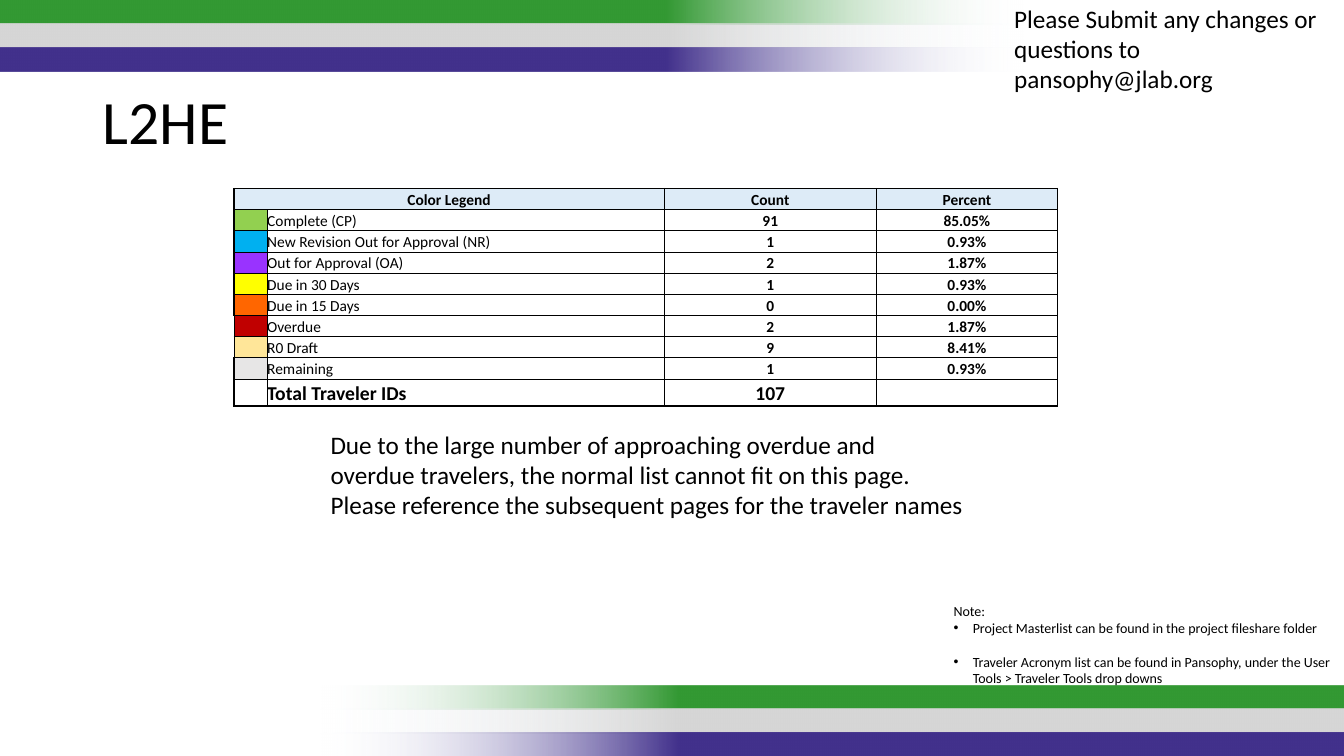
from copy import deepcopy

from lxml.etree import SubElement
from pptx import Presentation
from pptx.dml.color import RGBColor
from pptx.enum.shapes import MSO_SHAPE
from pptx.enum.text import MSO_ANCHOR, PP_ALIGN
from pptx.oxml.ns import qn
from pptx.util import Inches, Pt

COLORS = {
    "black": "000000", "fade": "F7FAFD", "header": "DDEBF7",
    "green": "339933", "gray": "D6D6D6", "purple": "42318C",
}

# Swatch, label, count, percent
STATUSES = [
    ("92D050", "Complete (CP)", "91", "85.05%"),
    ("00B0F0", "New Revision Out for Approval (NR)", "1", "0.93%"),
    ("9933FF", "Out for Approval (OA)", "2", "1.87%"),
    ("FFFF00", "Due in 30 Days", "1", "0.93%"),
    ("FF6600", "Due in 15 Days", "0", "0.00%"),
    ("C00000", "Overdue", "2", "1.87%"),
    ("FFE699", "R0 Draft", "9", "8.41%"),
    ("E7E6E6", "Remaining", "1", "0.93%"),
]
THIN_LEFT = ("Overdue", "R0 Draft")


def write(para, text, size=18, font="Calibri", color=COLORS["black"],
          bold=False, align=None, bullet=False, before=None, spacing=None):
    """Put formatted text in a paragraph."""
    if bullet:
        props = para._p.get_or_add_pPr()
        props.set("marL", str(Inches(0.19)))
        props.set("indent", str(Inches(-0.19)))
        SubElement(props, qn("a:buFont"), typeface="Arial")
        SubElement(props, qn("a:buChar"), char="•")
    if align is not None:
        para.alignment = align
    if before is not None:
        para.space_before = Pt(before)
    if spacing is not None:
        para.line_spacing = spacing
    if not text:
        SubElement(para._p, qn("a:endParaRPr"), sz=str(size * 100))
        return
    span = para.add_run()
    span.text = text
    span.font.name = font
    span.font.size = Pt(size)
    span.font.bold = bold
    span.font.color.rgb = RGBColor.from_string(color)


class Page:
    def __init__(self, deck, thin=0.5, thick=1):
        self.slide = deck.slides.add_slide(deck.slide_layouts[6])
        self.thin, self.thick = thin, thick

    def stripe(self, left, top, color, rotation=0):
        bar = self.slide.shapes.add_shape(
            MSO_SHAPE.RECTANGLE, Inches(left), Inches(top), Inches(10.17), Inches(0.24))
        bar.rotation = rotation
        bar.shadow.inherit = False
        bar.line.fill.background()
        bar.fill.gradient()
        bar.fill.gradient_angle = 0
        clear, solid = bar.fill.gradient_stops
        clear.position, solid.position = 0, 0.35
        clear.color.rgb = RGBColor.from_string(COLORS["fade"])
        solid.color.rgb = RGBColor.from_string(color)
        stops = bar._element.spPr.find(qn("a:gradFill")).find(qn("a:gsLst"))
        SubElement(stops[0][0], qn("a:alpha"), val="0")
        last = deepcopy(stops[1])
        last.set("pos", "100000")
        stops.append(last)

    def text_box(self, left, top, width, height, paragraphs):
        box = self.slide.shapes.add_textbox(
            Inches(left), Inches(top), Inches(width), Inches(height))
        frame = box.text_frame
        frame.word_wrap = True
        for index, (text, style) in enumerate(paragraphs):
            para = frame.add_paragraph() if index else frame.paragraphs[0]
            write(para, text, **style)

    def table(self, left, top, widths, heights):
        table = self.slide.shapes.add_table(
            len(heights), len(widths), Inches(left), Inches(top),
            Inches(sum(widths)), Inches(sum(heights))).table
        table.first_row = table.horz_banding = False
        for column, width in zip(table.columns, widths):
            column.width = Inches(width)
        for row, height in zip(table.rows, heights):
            row.height = Inches(height)
        return table

    def cell(self, cell, text, fill=None, thick="", inset=0, **style):
        cell.margin_left = cell.margin_right = cell.margin_top = Inches(inset)
        cell.margin_bottom = 0
        cell.vertical_anchor = MSO_ANCHOR.BOTTOM
        props = cell._tc.get_or_add_tcPr()
        for side in "LRTB":
            width = self.thick if side in thick else self.thin
            line = SubElement(props, qn(f"a:ln{side}"), w=str(Pt(width)))
            paint = SubElement(line, qn("a:solidFill"))
            SubElement(paint, qn("a:srgbClr"), val=COLORS["black"])
        if fill:
            cell.fill.solid()
            cell.fill.fore_color.rgb = RGBColor.from_string(fill)
        else:
            cell.fill.background()
        write(cell.text_frame.paragraphs[0], text, **style)


def main():
    deck = Presentation()
    deck.slide_width, deck.slide_height = Inches(13.33), Inches(7.5)
    page = Page(deck)

    # Stripes along the top and bottom edges
    for index, name in enumerate(("green", "gray", "purple")):
        offset = index * 0.235
        page.stripe(-0.01, offset, COLORS[name], rotation=180)
        page.stripe(3.18, 6.8 + offset, COLORS[name])

    # Title
    page.text_box(0.92, 0.86, 11.5, 0.99, [("L2HE", {"size": 44, "spacing": 0.9})])

    # Color legend table
    row_count = len(STATUSES) + 1
    table = page.table(2.32, 1.87, [0.33, 3.94, 2.1, 1.8], [0.21] * row_count + [0.27])
    center = {"bold": True, "align": PP_ALIGN.CENTER}
    table.cell(0, 0).merge(table.cell(0, 1))
    for column, text, thick in ((0, "Color Legend", "LT"), (1, "", "T"),
                                (2, "Count", "T"), (3, "Percent", "TR")):
        page.cell(table.cell(0, column), text, fill=COLORS["header"],
                  thick=thick, inset=0.01, size=11, **center)
    for row, (swatch, label, count, percent) in enumerate(STATUSES, 1):
        left_edge = "" if label in THIN_LEFT else "L"
        page.cell(table.cell(row, 0), "", fill=swatch, thick=left_edge, size=11)
        page.cell(table.cell(row, 1), label, size=11)
        page.cell(table.cell(row, 2), count, size=11, **center)
        page.cell(table.cell(row, 3), percent, thick="R", size=11, **center)

    # Total row
    total = sum(int(count) for _, _, count, _ in STATUSES)
    page.cell(table.cell(row_count, 0), "", thick="LB", size=11)
    page.cell(table.cell(row_count, 1), "Total Traveler IDs", thick="B", size=14, bold=True)
    page.cell(table.cell(row_count, 2), str(total), thick="B", size=14, **center)
    page.cell(table.cell(row_count, 3), "", thick="RB", size=11)

    # Contact, notes and message
    page.text_box(9.96, -0.02, 3.38, 1.01, [
        ("Please Submit any changes or questions to pansophy@jlab.org", {})])
    page.text_box(9.36, 5.93, 3.97, 0.94, [
        ("Note:", {"size": 10}),
        ("Project Masterlist can be found in the project fileshare folder",
         {"size": 10, "bullet": True}),
        ("Traveler Acronym list can be found in Pansophy, under the User Tools > "
         "Traveler Tools drop downs", {"size": 10, "bullet": True, "before": 12}),
    ])
    page.text_box(3.18, 4.21, 6.47, 1.31, [
        ("Due to the large number of approaching overdue and overdue travelers, "
         "the normal list cannot fit on this page. Please reference the subsequent "
         "pages for the traveler names", {})])

    deck.save("out.pptx")


if __name__ == "__main__":
    main()
